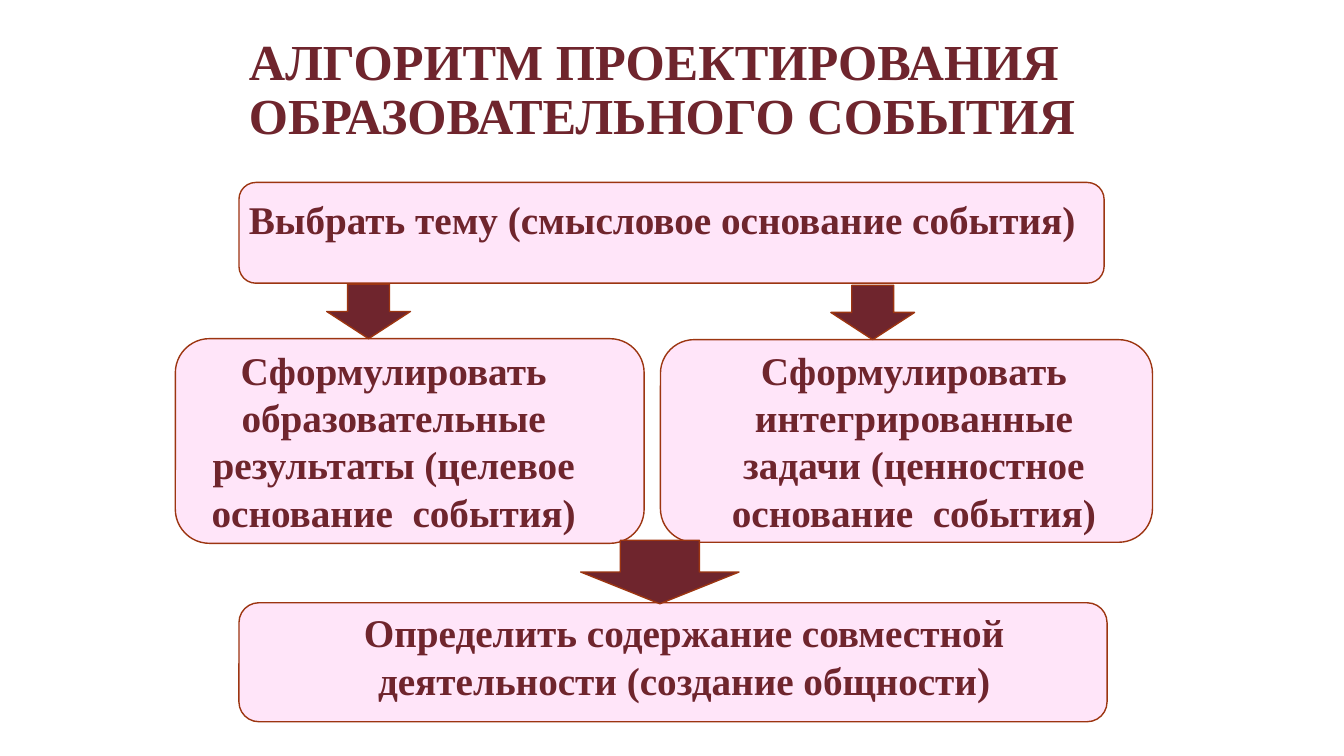
from pptx import Presentation
from pptx.dml.color import RGBColor
from pptx.enum.shapes import MSO_SHAPE
from pptx.enum.text import MSO_ANCHOR, PP_ALIGN
from pptx.util import Inches, Pt

COLORS = {"dark": "6F252D", "pink": "FFE5F9", "edge": "9C3511"}


class Deck:
    def __init__(self):
        self.prs = Presentation()
        self.prs.slide_width, self.prs.slide_height = Inches(13.33), Inches(7.5)
        self.s = self.prs.slides.add_slide(self.prs.slide_layouts[6])
        self.font = {"name": "Times New Roman", "bold": True}

    def color(self, name):
        return RGBColor.from_string(COLORS[name])

    def place(self, x, y, w, h):
        width, height = self.prs.slide_width, self.prs.slide_height
        return [int(share * side / 100)
                for share, side in zip((x, y, w, h), (width, height) * 2)]

    def shape(self, kind, fill, area):
        sp = self.s.shapes.add_shape(kind, *self.place(*area))
        sp.shadow.inherit = False
        sp.fill.solid()
        sp.fill.fore_color.rgb = self.color(fill)
        sp.line.color.rgb = self.color("edge")
        sp.line.width = Pt(1)

    def box(self, area):
        self.shape(MSO_SHAPE.ROUNDED_RECTANGLE, "pink", area)

    def arrow(self, area):
        self.shape(MSO_SHAPE.DOWN_ARROW, "dark", area)

    def text(self, words, area, size=28, align=PP_ALIGN.CENTER,
             anchor=MSO_ANCHOR.TOP, spacing=None):
        tf = self.s.shapes.add_textbox(*self.place(*area)).text_frame
        tf.word_wrap = True
        tf.vertical_anchor = anchor
        p = tf.paragraphs[0]
        p.alignment = align
        p.line_spacing = spacing
        r = p.add_run()
        r.text = words
        for key, value in {**self.font, "size": Pt(size)}.items():
            setattr(r.font, key, value)
        r.font.color.rgb = self.color("dark")


STEPS = [
    ("Выбрать тему (смысловое основание события)", PP_ALIGN.LEFT,
     (17.78, 24.13, 64.37, 13.33), (17.78, 25.2, 64.37, 13.87)),
    ("Сформулировать образовательные результаты (целевое основание  события)",
     PP_ALIGN.CENTER,
     (13.05, 44.8, 34.88, 27.07), (13.05, 45.2, 32.48, 26.53)),
    ("Сформулировать интегрированные задачи (ценностное основание  события)",
     PP_ALIGN.CENTER,
     (49.14, 44.93, 36.61, 26.8), (51.46, 45.2, 33.08, 26.27)),
    ("Определить содержание совместной деятельности (создание общности)",
     PP_ALIGN.CENTER,
     (17.78, 79.73, 64.59, 15.73), (19.58, 79.87, 62.64, 13.87)),
]
ARROWS = [
    (24.31, 37.6, 6.23, 7.2),
    (61.82, 37.73, 6.23, 7.2),
    (43.21, 71.47, 11.78, 8.4),
]


def main():
    deck = Deck()
    deck.text("АЛГОРИТМ ПРОЕКТИРОВАНИЯ ОБРАЗОВАТЕЛЬНОГО СОБЫТИЯ",
              (17.78, 3.73, 72.47, 16.67), 36, PP_ALIGN.LEFT,
              MSO_ANCHOR.MIDDLE, 0.9)
    for words, align, box_area, text_area in STEPS:
        deck.box(box_area)
        deck.text(words, text_area, align=align)
    for area in ARROWS:
        deck.arrow(area)
    deck.prs.save("out.pptx")


if __name__ == "__main__":
    main()
